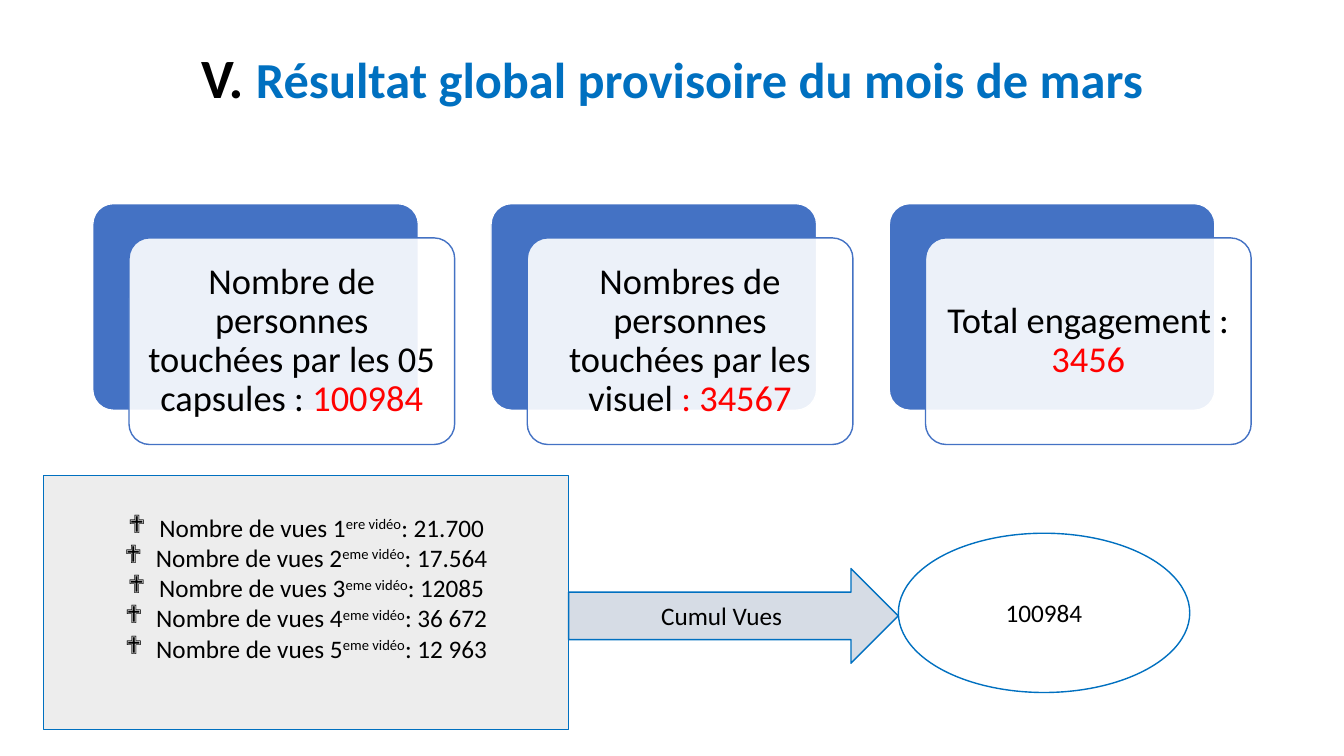
from lxml.etree import SubElement
from pptx import Presentation
from pptx.dml.color import RGBColor
from pptx.enum.shapes import MSO_SHAPE as Preset
from pptx.enum.text import MSO_ANCHOR as Anchor, PP_ALIGN as Align
from pptx.oxml.ns import qn
from pptx.util import Pt

PX = 9144  # EMU per px, 100 px to the inch
FONT = "Calibri"
BLUE, ACCENT, RED, BLACK, WHITE = "0070C0", "4472C4", "FF0000", "000000", "FFFFFF"

CARDS = [
    ("Nombre de personnes touchées par les 05 capsules : ", "100984"),
    ("Nombres de personnes touchées par les visuel ", ": 34567"),
    ("Total engagement : ", "3456"),
]
VIDEO_VIEWS = [
    ("1", "ere", "21.700"),
    ("2", "eme", "17.564"),
    ("3", "eme", "12085"),
    ("4", "eme", "36 672"),
    ("5", "eme", "12 963"),
]


def color(hex_text):
    return RGBColor.from_string(hex_text)


def box(left, top, width, height):
    return [length * PX for length in (left, top, width, height)]


def add_run(paragraph, text, size=18, fill=BLACK, bold=False, raised=False):
    run = paragraph.add_run()
    run.text = text
    run.font.name = FONT
    run.font.size = Pt(size)
    run.font.bold = bold
    run.font.color.rgb = color(fill)
    if raised:
        run.font._element.set("baseline", "30000")


def set_frame(shape, anchor=Anchor.MIDDLE, insets=(10, 5, 10, 5)):
    """Wrap the text, set anchor and insets, and return the centred first paragraph."""
    frame = shape.text_frame
    frame.word_wrap = True
    frame.vertical_anchor = anchor
    (frame.margin_left, frame.margin_top,
     frame.margin_right, frame.margin_bottom) = [inset * PX for inset in insets]
    paragraph = frame.paragraphs[0]
    paragraph.alignment = Align.CENTER
    return paragraph


def add_block(slide, preset, place, fill, line, opacity=100):
    shape = slide.shapes.add_shape(preset, *box(*place))
    shape.shadow.inherit = False
    shape.fill.solid()
    shape.fill.fore_color.rgb = color(fill)
    shape.line.color.rgb = color(line)
    shape.line.width = Pt(1)
    if opacity < 100:
        fill_color = shape._element.spPr.find(qn("a:solidFill"))[0]
        SubElement(fill_color, qn("a:alpha"), val=str(opacity * 1000))
    return shape


def set_bullet(paragraph, character, indent):
    properties = paragraph._p.get_or_add_pPr()
    properties.set("marL", str(indent * PX))
    properties.set("indent", str(-indent * PX))
    SubElement(properties, qn("a:buFont"), typeface="Wingdings")
    SubElement(properties, qn("a:buChar"), char=character)


def add_title(slide):
    title = slide.shapes.add_textbox(*box(92, 40, 1150, 145))
    paragraph = set_frame(title, Anchor.TOP, (10, 10, 10, 5))
    paragraph.line_spacing = 0.9
    add_run(paragraph, "V. ", size=39.6, bold=True)
    add_run(paragraph, "Résultat global provisoire du mois de mars",
            size=36, fill=BLUE, bold=True)


def add_card(slide, left, label, value):
    """A blue card with a translucent text card offset over it."""
    back = add_block(slide, Preset.ROUNDED_RECTANGLE, (left, 202, 323, 205), ACCENT, WHITE)
    front = add_block(slide, Preset.ROUNDED_RECTANGLE, (left + 36, 236, 323, 205),
                      WHITE, ACCENT, opacity=90)
    for card in (back, front):
        card.adjustments[0] = 0.1
    paragraph = set_frame(front, insets=(11, 11, 11, 11))
    paragraph.line_spacing = 0.9
    add_run(paragraph, label, size=26)
    add_run(paragraph, value, size=26, fill=RED)


def add_view_list(slide):
    panel = add_block(slide, Preset.RECTANGLE, (43, 472, 521, 252), "EDEDED", BLUE)
    paragraph = set_frame(panel, insets=(10, 5, 10, 35))
    for index, (number, suffix, views) in enumerate(VIDEO_VIEWS):
        if index:
            paragraph = panel.text_frame.add_paragraph()
            paragraph.alignment = Align.CENTER
        set_bullet(paragraph, "❖", 31)
        add_run(paragraph, f"Nombre de vues {number}")
        add_run(paragraph, f"{suffix} vidéo", raised=True)
        add_run(paragraph, f": {views}")


def add_label(slide, preset, place, fill, text):
    add_run(set_frame(add_block(slide, preset, place, fill, BLUE)), text)


def main():
    presentation = Presentation()
    presentation.slide_width = 1333 * PX
    presentation.slide_height = 750 * PX
    slide = presentation.slides.add_slide(presentation.slide_layouts[6])

    add_title(slide)
    for index, (label, value) in enumerate(CARDS):
        add_card(slide, 92 + 395 * index, label, value)
    add_view_list(slide)
    add_label(slide, Preset.RIGHT_ARROW, (564, 564, 327, 94), "D6DCE5", "Cumul Vues")
    add_label(slide, Preset.OVAL, (891, 529, 289, 158), WHITE, "100984")

    presentation.save("out.pptx")


if __name__ == "__main__":
    main()
